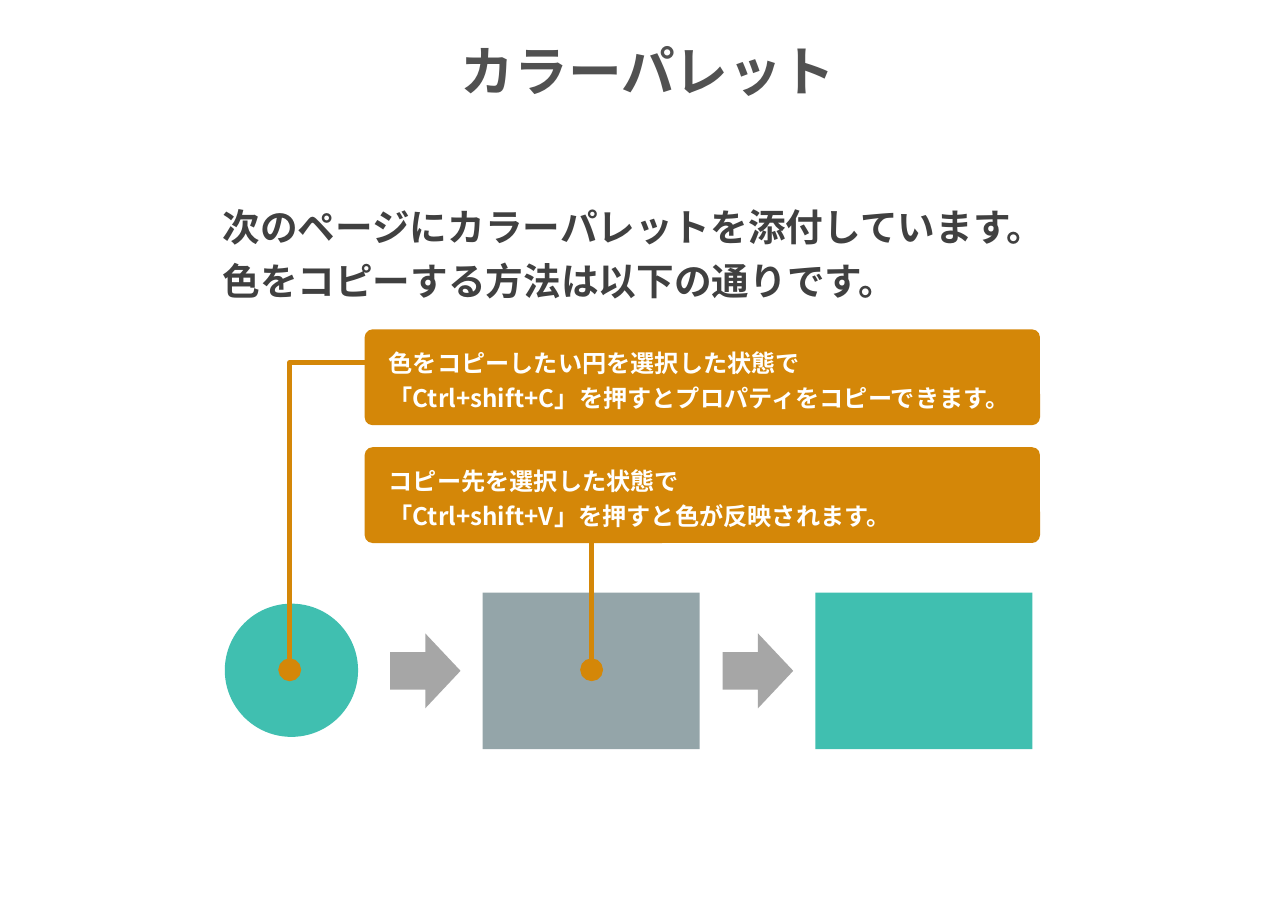
from pptx import Presentation
from pptx.dml.color import RGBColor
from pptx.enum.shapes import MSO_CONNECTOR, MSO_SHAPE
from pptx.enum.text import PP_ALIGN
from pptx.oxml.ns import qn
from pptx.util import Inches, Pt
from lxml.etree import SubElement

FONT = "Noto Sans CJK JP"
COLORS = {
    "title": "515151",
    "body": "404040",
    "white": "FFFFFF",
    "teal": "40BFB0",
    "slate": "94A5A9",
    "arrow": "A6A6A6",
    "callout": "D48708",
}

deck = Presentation()
deck.slide_width = Inches(11.69)
deck.slide_height = Inches(8.27)
page = deck.slides.add_slide(deck.slide_layouts[6])


def add_shape(kind, left, top, width, height, color):
    shape = page.shapes.add_shape(
        kind, Inches(left), Inches(top), Inches(width), Inches(height))
    shape.shadow.inherit = False
    shape.fill.solid()
    shape.fill.fore_color.rgb = RGBColor.from_string(COLORS[color])
    shape.line.fill.background()
    return shape


def add_text(left, top, width, height, lines, size, color, indent=0.18, spacing=1.2):
    box = page.shapes.add_textbox(
        Inches(left), Inches(top), Inches(width), Inches(height))
    frame = box.text_frame
    frame.word_wrap = True
    frame.text = "\n".join(lines)
    for para in frame.paragraphs:
        para.line_spacing = spacing
        para.font.size = Pt(size)
        para.font.bold = True
        para.font.name = FONT
        para.font.color.rgb = RGBColor.from_string(COLORS[color])
        properties = para._p.get_or_add_pPr()
        properties.set("marL", str(Inches(indent)))
        # East Asian typeface for the Japanese characters
        SubElement(properties.find(qn("a:defRPr")), qn("a:ea"), typeface=FONT)
    return frame


# Row of samples: source circle, target before, target after
row_middle = 6.09
add_shape(MSO_SHAPE.OVAL, 2.04, row_middle - 0.61, 1.21, 1.21, "teal")
for left, color in ((4.38, "slate"), (7.4, "teal")):
    add_shape(MSO_SHAPE.RECTANGLE, left, row_middle - 0.71, 1.97, 1.42, color)
for left in (3.54, 6.56):
    add_shape(MSO_SHAPE.RIGHT_ARROW, left, row_middle - 0.34, 0.64, 0.68, "arrow")

# Title and introduction
title = add_text(0.38, 0.29, 10.95, 0.81, ["カラーパレット"], 35.1, "title", 0, 1.0)
title.margin_right = Inches(0.04)
title.paragraphs[0].alignment = PP_ALIGN.CENTER
add_text(1.74, 1.72, 8.21, 1.06, [
    "次のページにカラーパレットを添付しています。",
    "色をコピーする方法は以下の通りです。",
], 24.6, "body")

# Callouts
callouts = [
    (2.99, ["色をコピーしたい円を選択した状態で",
            "「Ctrl+shift+C」を押すとプロパティをコピーできます。"]),
    (4.06, ["コピー先を選択した状態で",
            "「Ctrl+shift+V」を押すと色が反映されます。"]),
]
for top, lines in callouts:
    panel = add_shape(MSO_SHAPE.ROUNDED_RECTANGLE, 3.31, top, 6.13, 0.87, "callout")
    panel.adjustments[0] = 0.083
    add_text(3.25, top + 0.07, 6.13, 0.72, lines, 15.8, "white")

# Leaders from the callouts to the samples
builder = page.shapes.build_freeform(Inches(3.33), Inches(3.29))
builder.add_line_segments(
    [(Inches(2.63), Inches(3.29)), (Inches(2.63), Inches(6.08))], close=False)
elbow = builder.convert_to_shape()
elbow.fill.background()
elbow.shadow.inherit = False

stem = page.shapes.add_connector(
    MSO_CONNECTOR.STRAIGHT, Inches(5.37), Inches(4.93), Inches(5.37), Inches(6.08))

for leader in (elbow, stem):
    leader.line.width = Pt(3)
    leader.line.color.rgb = RGBColor.from_string(COLORS["callout"])
    outline = leader.line._get_or_add_ln()
    SubElement(outline, qn("a:round"))
    SubElement(outline, qn("a:tailEnd"), type="oval", w="lg", len="lg")
SubElement(stem._element.spPr, qn("a:effectLst"))

deck.save("out.pptx")
